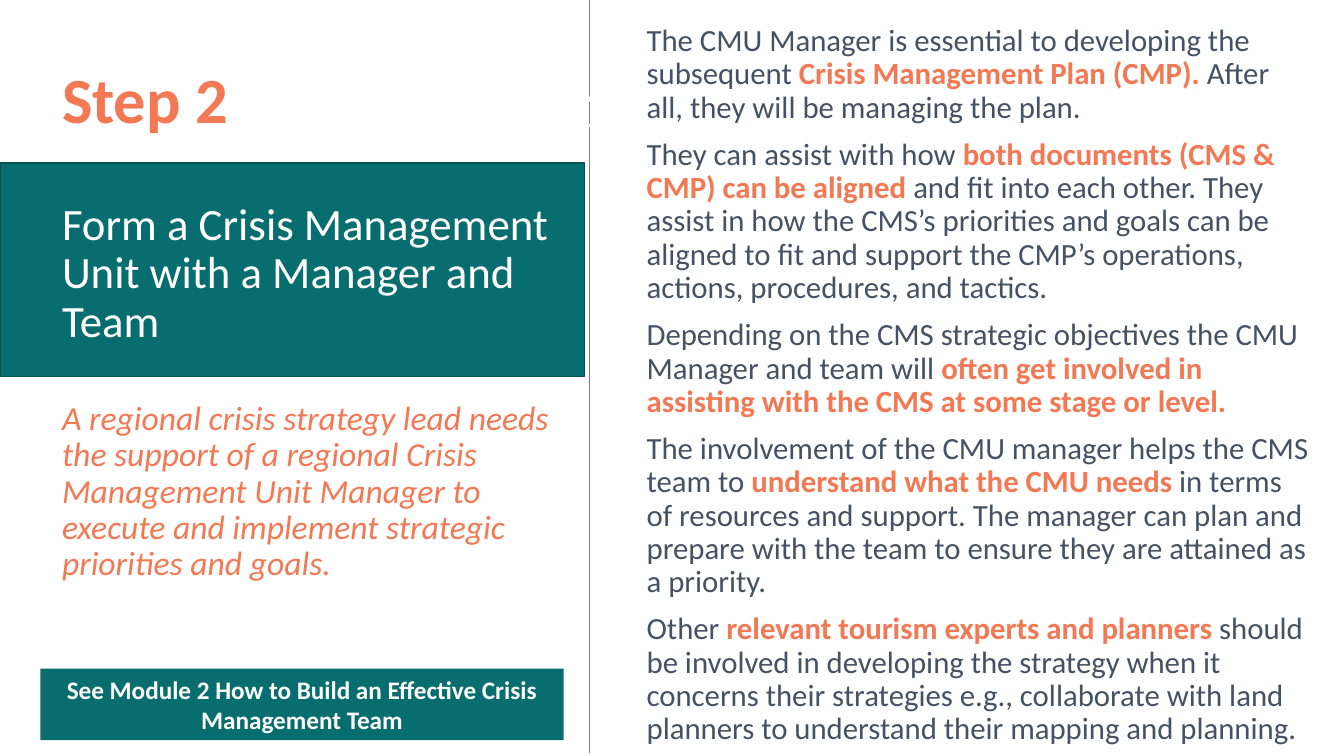
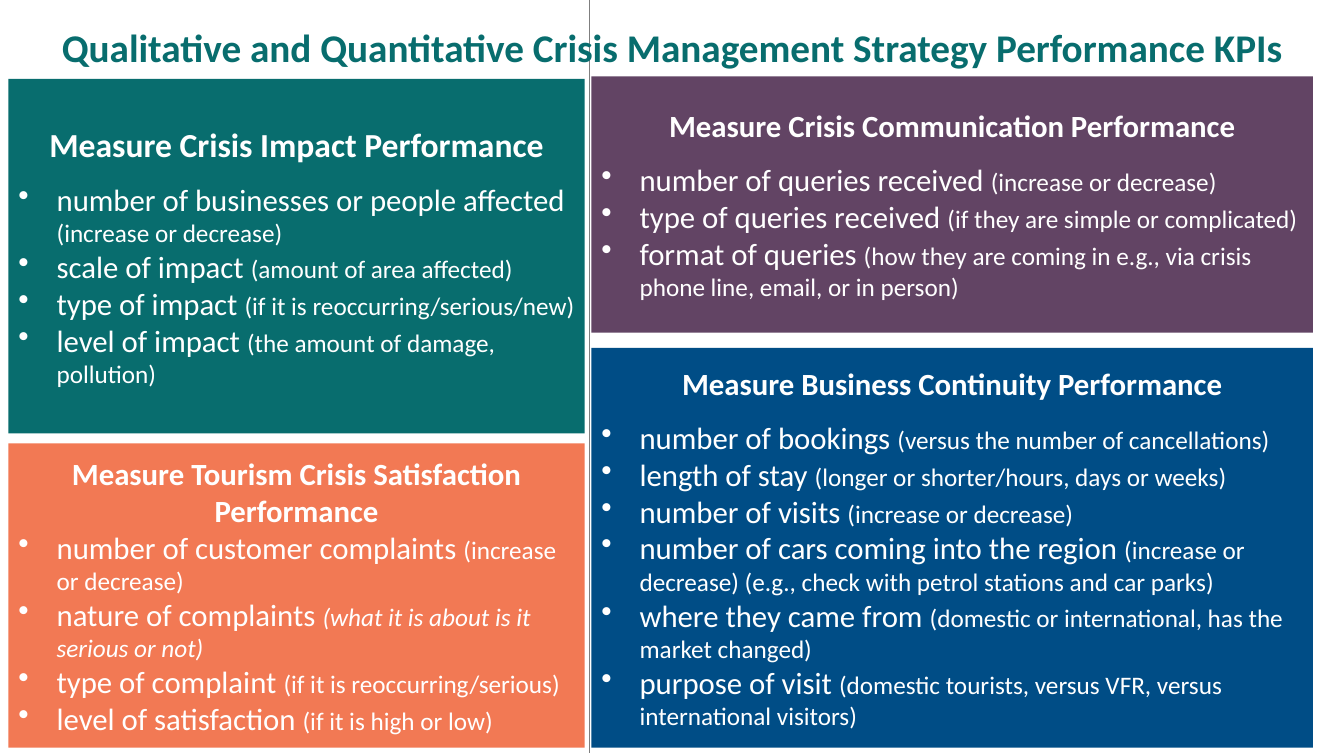
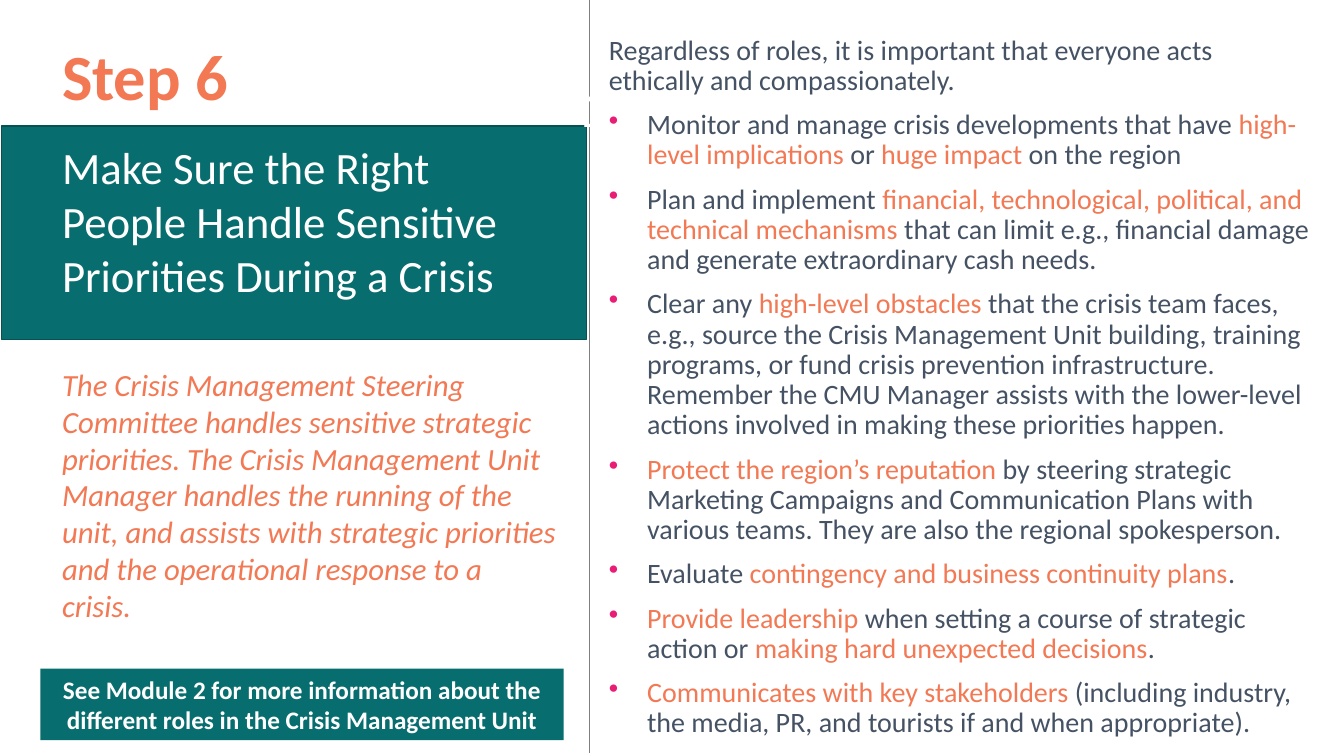
"""Build three slides on crisis management steps and performance measures."""
from dataclasses import dataclass
from typing import NamedTuple, Optional

from lxml.etree import SubElement
from pptx import Presentation
from pptx.dml.color import RGBColor
from pptx.enum.shapes import MSO_CONNECTOR, MSO_SHAPE
from pptx.enum.text import MSO_ANCHOR, PP_ALIGN
from pptx.oxml.ns import qn
from pptx.util import Inches, Pt

COLORS = {
    "white": "FFFFFF",
    "ink": "455264",
    "teal": "086D6E",
    "teal_edge": "065151",
    "coral": "F27954",
    "plum": "624464",
    "blue": "004D86",
    "pink": "EA1D76",
    "divider": "7F7F7F",
}
FONT = "Calibri"
SLIDE_WIDTH, SLIDE_HEIGHT = 13.33, 7.5
COLUMNS, ROWS = 160, 90
DIVIDER_COLUMN, DIVIDER_END = 70.2, 89.6
BULLET_INDENT = 0.38


class Area(NamedTuple):
    """Hold a place in grid columns and rows."""

    left: float
    top: float
    width: float
    height: float


class Emphasis(NamedTuple):
    """Describe how the parts between asterisks differ from the rest."""

    color: Optional[str] = None
    size: Optional[float] = None
    bold: bool = False
    italic: bool = False


@dataclass(frozen=True)
class Measure:
    """Name a performance measure and the remark that explains it."""

    name: str
    remark: str
    italic: bool = False


@dataclass(frozen=True)
class Card:
    """Describe a coloured panel of measures."""

    heading: str
    fill: str
    height: float
    measures: tuple[Measure, ...]
    heading_size: float = 22
    heading_gap: float = 12


@dataclass(frozen=True)
class CardColumn:
    """Stack cards downwards with an equal gap."""

    left: float
    top: float
    width: float
    gap: float
    cards: tuple[Card, ...]


@dataclass(frozen=True)
class Step:
    """Describe a step slide with its headline, summary and details."""

    label: str
    headline: str
    summary: str
    reference: str
    details: tuple[str, ...]
    band: Area
    story: Area
    body: Area
    label_spacing: float
    story_spacing: float
    headline_gap: float
    summary_gap: float
    summary_size: float
    body_size: float
    bold_emphasis: bool = False
    bulleted: bool = False


MARKER = Area(62.8, 9.4, 15.1, 11.3)
REFERENCE = Area(4.8, 79.6, 62.3, 8.5)
KPI_TITLE = Area(0, 2.2, 160, 6.8)

STEPS = (
    Step(
        label="Step 2",
        headline="Form a Crisis Management Unit with a Manager and Team",
        summary="A regional crisis strategy lead needs the support of a regional Crisis "
        "Management Unit Manager to execute and implement strategic priorities and goals.",
        reference="See Module 2 How to Build an Effective Crisis Management Team",
        details=(
            "The CMU Manager is essential to developing the subsequent *Crisis Management "
            "Plan (CMP). *After all, they will be managing the plan.",
            "They can assist with how *both documents (CMS & CMP) can be aligned *and fit "
            "into each other. They assist in how the CMS’s priorities and goals can be "
            "aligned to fit and support the CMP’s operations, actions, procedures, and tactics.",
            "Depending on the CMS strategic objectives the CMU Manager and team will *often "
            "get involved in assisting with the CMS at some stage or level.*",
            "The involvement of the CMU manager helps the CMS team to *understand what the "
            "CMU needs *in terms of resources and support. The manager can plan and prepare "
            "with the team to ensure they are attained as a priority.",
            "Other *relevant tourism experts and planners *should be involved in developing "
            "the strategy when it concerns their strategies e.g., collaborate with land "
            "planners to understand their mapping and planning.",
        ),
        band=Area(0, 19.4, 69.6, 25.4),
        story=Area(6.2, 4.6, 61.2, 80.4),
        body=Area(75.8, 2.4, 81.2, 48.8),
        label_spacing=1.2,
        story_spacing=0.9,
        headline_gap=46.7,
        summary_gap=39,
        summary_size=24,
        body_size=22,
        bold_emphasis=True,
    ),
    Step(
        label="Step 6",
        headline="Make Sure the Right People Handle Sensitive Priorities During a Crisis",
        summary="The Crisis Management Steering Committee handles sensitive strategic "
        "priorities. The Crisis Management Unit Manager handles the running of the unit, "
        "and assists with strategic priorities and the operational response to a crisis.",
        reference="See Module 2 for more information about the different roles in the "
        "Crisis Management Unit",
        details=(
            "Regardless of roles, it is important that everyone acts ethically and "
            "compassionately.",
            "Monitor and manage crisis developments that have *high-level implications *or "
            "*huge impact *on the region",
            "Plan and implement *financial, technological, political, and technical "
            "mechanisms *that can limit e.g., financial damage and generate extraordinary "
            "cash needs.",
            "Clear any *high-level obstacles *that the crisis team faces, e.g., source the "
            "Crisis Management Unit building, training programs, or fund crisis prevention "
            "infrastructure. Remember the CMU Manager assists with the lower-level actions "
            "involved in making these priorities happen.",
            "*Protect the region’s reputation *by steering strategic Marketing Campaigns and "
            "Communication Plans with various teams. They are also the regional spokesperson.",
            "Evaluate *contingency and business continuity plans*.",
            "*Provide leadership *when setting a course of strategic action or *making hard "
            "unexpected decisions*.",
            "*Communicates with key stakeholders *(including industry, the media, PR, and "
            "tourists if and when appropriate).",
        ),
        band=Area(0.2, 15, 69.6, 25.4),
        story=Area(6.2, 3.7, 61.2, 80.4),
        body=Area(71.3, 3.7, 85.8, 48.8),
        label_spacing=1,
        story_spacing=1,
        headline_gap=19.2,
        summary_gap=45.6,
        summary_size=22,
        body_size=20,
        bulleted=True,
    ),
)

CARD_COLUMNS = (
    CardColumn(1, 9.4, 68.6, 1.2, (
        Card("Measure Crisis Impact Performance", "teal", 42.2, (
            Measure("number of businesses or people affected", "(increase or decrease)"),
            Measure("scale of impact", "(amount of area affected)"),
            Measure("type of impact", "(if it is reoccurring/serious/new)"),
            Measure("level of impact", "(the amount of damage, pollution)"),
        ), heading_size=24),
        Card("Measure Tourism Crisis Satisfaction Performance", "coral", 36.2, (
            Measure("number of customer complaints", "(increase or decrease)"),
            Measure("nature of complaints", "(what it is about is it serious or not)", True),
            Measure("type of complaint", "(if it is reoccurring/serious)"),
            Measure("level of satisfaction", "(if it is high or low)"),
        ), heading_gap=0),
    )),
    CardColumn(70.4, 9.1, 85.9, 1.8, (
        Card("Measure Crisis Communication Performance", "plum", 30.5, (
            Measure("number of queries received", "(increase or decrease)"),
            Measure("type of queries received", "(if they are simple or complicated)"),
            Measure("format of queries", "(how they are coming in e.g., via crisis phone "
                    "line, email, or in person)"),
        )),
        Card("Measure Business Continuity Performance", "blue", 47.6, (
            Measure("number of bookings", "(versus the number of cancellations)"),
            Measure("length of stay", "(longer or shorter/hours, days or weeks)"),
            Measure("number of visits", "(increase or decrease)"),
            Measure("number of cars coming into the region", "(increase or decrease) "
                    "(e.g., check with petrol stations and car parks)"),
            Measure("where they came from", "(domestic or international, has the market "
                    "changed)"),
            Measure("purpose of visit", "(domestic tourists, versus VFR, versus "
                    "international visitors)"),
        )),
    )),
)


def rgb(name: str) -> RGBColor:
    """Look up a named colour."""
    return RGBColor.from_string(COLORS[name])


def across(columns: float) -> int:
    """Turn grid columns into a length."""
    return Inches(SLIDE_WIDTH * columns / COLUMNS)


def down(rows: float) -> int:
    """Turn grid rows into a length."""
    return Inches(SLIDE_HEIGHT * rows / ROWS)


def place(area: Area) -> tuple[int, int, int, int]:
    """Turn a grid area into left, top, width and height."""
    return across(area.left), down(area.top), across(area.width), down(area.height)


def add_bullet(paragraph, color: str) -> None:
    """Give a paragraph a hanging round bullet."""
    properties = paragraph._p.get_or_add_pPr()
    properties.set("marL", str(Inches(BULLET_INDENT)))
    properties.set("indent", str(-Inches(BULLET_INDENT)))
    bullet_color = SubElement(properties, qn("a:buClr"))
    SubElement(bullet_color, qn("a:srgbClr")).set("val", COLORS[color])
    SubElement(properties, qn("a:buChar")).set("char", "•")


def write(frame, text: str, *, size: float, color: str = "white", bold: bool = False,
          italic: bool = False, align: PP_ALIGN = PP_ALIGN.LEFT, spacing: float = 1,
          before: float = 0, after: float = 0, bullet: Optional[str] = None,
          emphasis: Emphasis = Emphasis()) -> None:
    """Add a paragraph whose parts between asterisks are emphasised."""
    is_first = not frame.paragraphs[0].runs
    paragraph = frame.paragraphs[0] if is_first else frame.add_paragraph()
    if bullet:
        add_bullet(paragraph, bullet)
    paragraph.alignment = align
    paragraph.line_spacing = spacing
    paragraph.space_before = Pt(0 if is_first else before)
    paragraph.space_after = Pt(after)
    for index, part in enumerate(text.split("*")):
        if not part:
            continue
        stressed = index % 2 == 1
        run = paragraph.add_run()
        run.text = part
        run.font.name = FONT
        run.font.size = Pt(emphasis.size if stressed and emphasis.size else size)
        run.font.bold = bold or (stressed and emphasis.bold)
        run.font.italic = italic or (stressed and emphasis.italic)
        run.font.color.rgb = rgb(emphasis.color if stressed and emphasis.color else color)


def add_text_frame(slide, area: Area):
    """Add a wrapping text box and return its frame."""
    frame = slide.shapes.add_textbox(*place(area)).text_frame
    frame.word_wrap = True
    return frame


def add_panel(slide, area: Area, fill: str, edge: Optional[str] = None):
    """Add a filled rectangle and return its text frame."""
    panel = slide.shapes.add_shape(MSO_SHAPE.RECTANGLE, *place(area))
    panel.shadow.inherit = False
    panel.fill.solid()
    panel.fill.fore_color.rgb = rgb(fill)
    if edge:
        panel.line.color.rgb = rgb(edge)
        panel.line.width = Pt(1)
    else:
        panel.line.fill.background()
    panel.text_frame.word_wrap = True
    panel.text_frame.vertical_anchor = MSO_ANCHOR.MIDDLE
    return panel.text_frame


def add_divided_slide(deck):
    """Add a blank slide with the shared vertical divider."""
    slide = deck.slides.add_slide(deck.slide_layouts[6])
    column = across(DIVIDER_COLUMN)
    divider = slide.shapes.add_connector(
        MSO_CONNECTOR.STRAIGHT, column, 0, column, down(DIVIDER_END))
    divider.line.color.rgb = rgb("divider")
    divider.line.width = Pt(0.5)
    SubElement(divider._element.spPr, qn("a:effectLst"))
    return slide


def add_step_slide(deck, step: Step) -> None:
    """Draw a step slide."""
    slide = add_divided_slide(deck)
    add_panel(slide, step.band, "teal", "teal_edge")

    body = add_text_frame(slide, step.body)
    stress = Emphasis(color="coral", bold=step.bold_emphasis)
    for index, detail in enumerate(step.details):
        write(body, detail, size=step.body_size, color="ink", spacing=0.9, before=10,
              bullet="pink" if step.bulleted and index else None, emphasis=stress)

    story = add_text_frame(slide, step.story)
    write(story, step.label, size=46, color="coral", bold=True, spacing=step.label_spacing)
    write(story, step.headline, size=32, spacing=step.story_spacing,
          before=step.headline_gap)
    write(story, step.summary, size=step.summary_size, color="coral", italic=True,
          spacing=step.story_spacing, before=step.summary_gap)

    marker = add_text_frame(slide, MARKER)
    write(marker, "1", size=36, align=PP_ALIGN.CENTER, spacing=0.9)
    reference = add_panel(slide, REFERENCE, "teal")
    write(reference, step.reference, size=18, bold=True, align=PP_ALIGN.CENTER)


def add_card(slide, card: Card, area: Area) -> None:
    """Draw a card with its heading and measures."""
    panel = add_panel(slide, area, card.fill)
    write(panel, card.heading, size=card.heading_size, bold=True,
          align=PP_ALIGN.CENTER, after=card.heading_gap)
    for measure in card.measures:
        write(panel, f"{measure.name} *{measure.remark}*", size=22, bullet="white",
              emphasis=Emphasis(size=18, italic=measure.italic))


def add_kpi_slide(deck) -> None:
    """Draw the slide of performance measures."""
    slide = add_divided_slide(deck)
    title = add_text_frame(slide, KPI_TITLE)
    write(title, "Qualitative and Quantitative Crisis Management Strategy Performance KPIs",
          size=28, color="teal", bold=True, align=PP_ALIGN.CENTER)
    for column in CARD_COLUMNS:
        top = column.top
        for card in column.cards:
            add_card(slide, card, Area(column.left, top, column.width, card.height))
            top += card.height + column.gap


def main() -> None:
    """Build and save the deck."""
    deck = Presentation()
    deck.slide_width = Inches(SLIDE_WIDTH)
    deck.slide_height = Inches(SLIDE_HEIGHT)
    forming_unit, handling_priorities = STEPS
    add_step_slide(deck, forming_unit)
    add_kpi_slide(deck)
    add_step_slide(deck, handling_priorities)
    deck.save("out.pptx")


if __name__ == "__main__":
    main()
